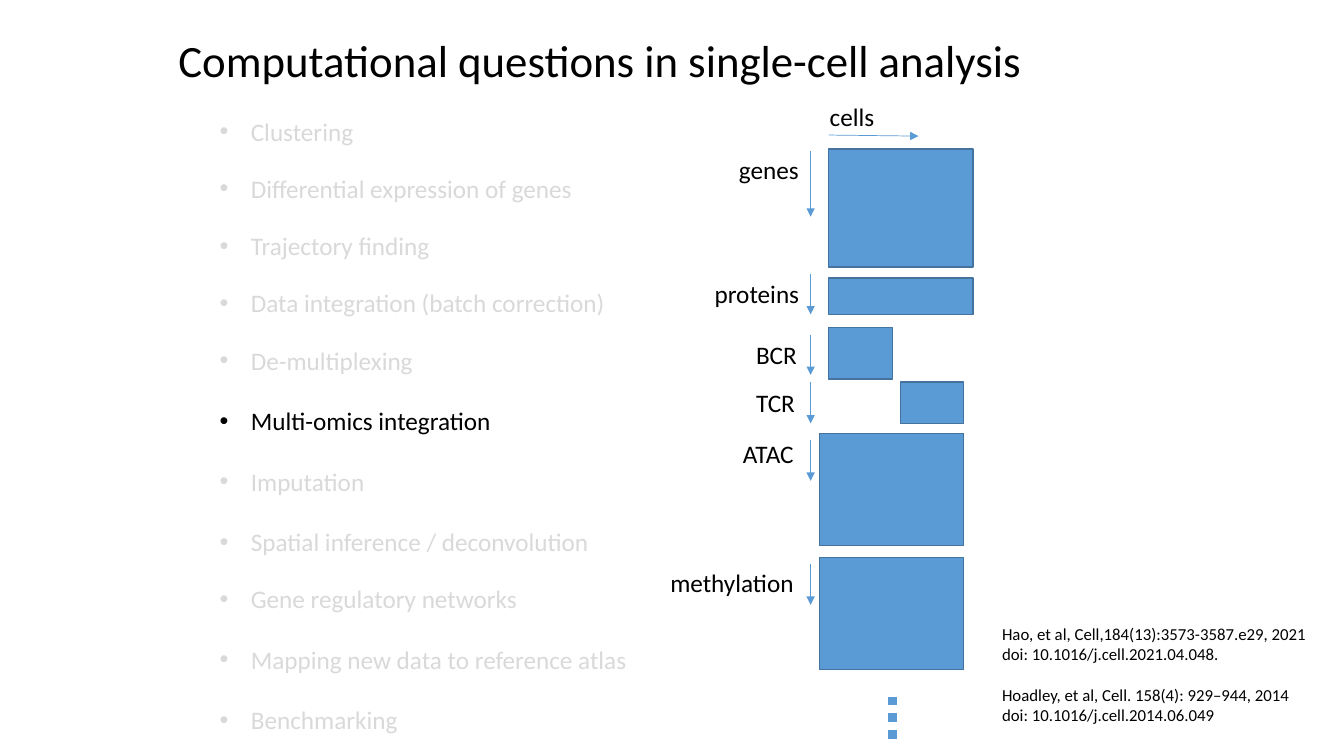
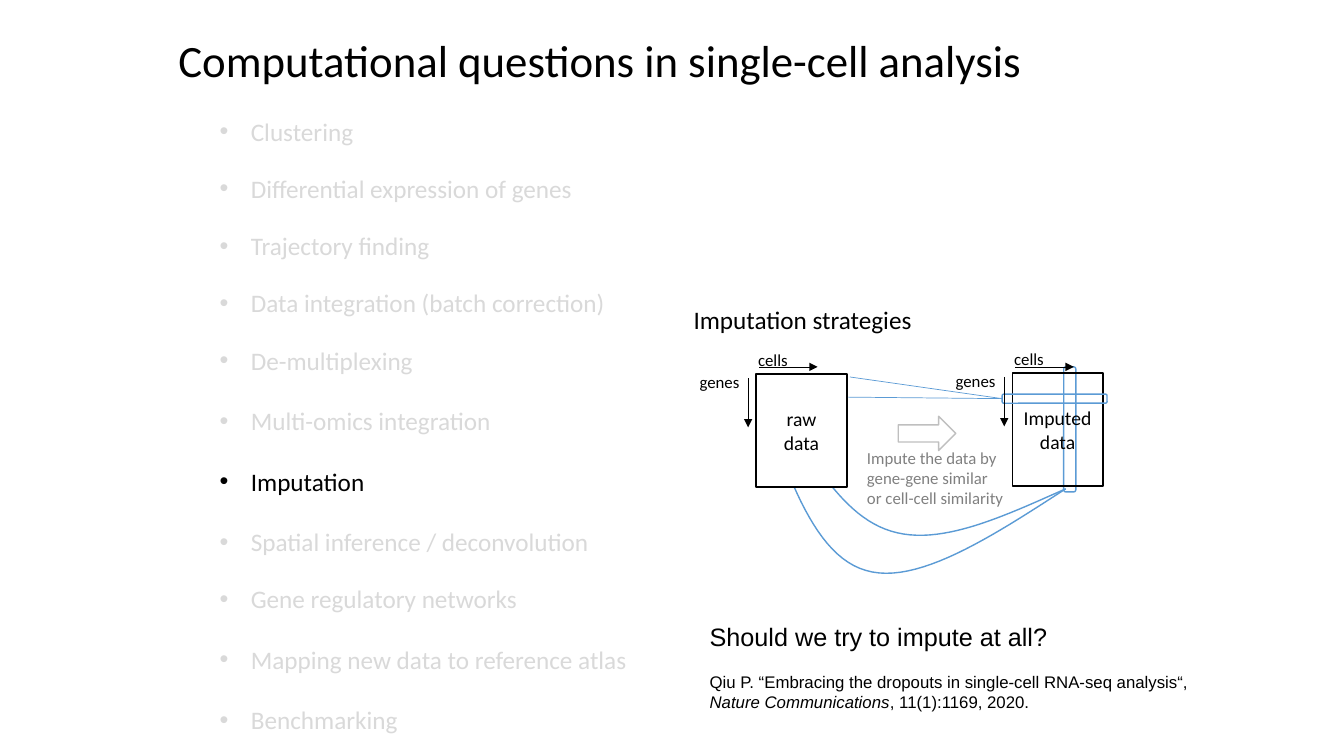
from pptx import Presentation
from pptx import util as u
from pptx.dml.color import RGBColor
from pptx.enum import dml, shapes, text
from pptx.oxml.ns import qn
from lxml import etree

PX = 9144  # EMU per px, 100 px to the inch
COLORS = {
    "ink": "000000", "muted": "D9D9D9", "note": "808080", "paper": "FFFFFF",
    "blue": "5B9BD5", "edge": "43739E", "arrow": "BFBFBF",
}
RGB = {name: RGBColor.from_string(value) for name, value in COLORS.items()}
TITLE = "Computational questions in single-cell analysis"
# Each topic with the space below it in points
TOPICS = [
    ("Clustering", 19.3),
    ("Differential expression of genes", 19.3),
    ("Trajectory finding", 19.3),
    ("Data integration (batch correction)", 19.3),
    ("De-multiplexing", 21.6),
    ("Multi-omics integration", 21.6),
    ("Imputation", 21.6),
    ("Spatial inference / deconvolution", 19.3),
    ("Gene regulatory networks", 21.6),
    ("Mapping new data to reference atlas", 21.6),
    ("Benchmarking", 0),
]


def write(slide, box, lines, size, color="ink", font="Calibri", wrap=True):
    """Add a text box with one paragraph per line and return its text frame."""
    frame = slide.shapes.add_textbox(*(v * PX for v in box)).text_frame
    frame.word_wrap = wrap
    frame.auto_size = text.MSO_AUTO_SIZE.SHAPE_TO_FIT_TEXT
    frame.text = "\n".join(lines)
    for paragraph in frame.paragraphs:
        paragraph.font.size = u.Pt(size)
        paragraph.font.name = font
        paragraph.font.color.rgb = RGB[color]
    return frame


def draw(slide, preset, box, fill, edge, caption=""):
    """Add an outlined preset shape; a fill of None leaves it see-through."""
    shape = slide.shapes.add_shape(preset, *(v * PX for v in box))
    shape.shadow.inherit = False
    if fill:
        shape.fill.solid()
        shape.fill.fore_color.rgb = RGB[fill]
    else:
        shape.fill.background()
    shape.line.color.rgb = RGB[edge]
    shape.line.width = u.Pt(1)
    if caption:
        shape.text_frame.text = caption
        for paragraph in shape.text_frame.paragraphs:
            paragraph.alignment = text.PP_ALIGN.CENTER
            paragraph.font.size = u.Pt(14)
            paragraph.font.name = "Calibri"
            paragraph.font.color.rgb = RGB["ink"]
    return shape


RECT = shapes.MSO_SHAPE.RECTANGLE
ROUNDED = shapes.MSO_SHAPE.ROUNDED_RECTANGLE
prs = Presentation()
prs.slide_width, prs.slide_height = 1333 * PX, 750 * PX

# Title and topic list, with the current topic in black
pages = []
for current in ("Multi-omics integration", "Imputation"):
    page = prs.slides.add_slide(prs.slide_layouts[6])
    pages.append(page)
    heading = write(page, (167, 0, 1000, 125), [TITLE], 32)
    heading.auto_size = text.MSO_AUTO_SIZE.NONE
    heading.vertical_anchor = text.MSO_ANCHOR.MIDDLE
    heading.paragraphs[0].line_spacing = 0.9
    topics = write(page, (208, 110, 900, 629), [name for name, _ in TOPICS], 18, "muted")
    for paragraph, (name, gap) in zip(topics.paragraphs, TOPICS):
        paragraph.space_after = u.Pt(gap)
        if name == current:
            paragraph.font.color.rgb = RGB["ink"]
        properties = paragraph._p.get_or_add_pPr()
        properties.set("marL", str(31 * PX))
        properties.set("indent", str(-31 * PX))
        defaults = properties.find(qn("a:defRPr"))
        defaults.addprevious(etree.Element(qn("a:buFont"), typeface="Arial"))
        defaults.addprevious(etree.Element(qn("a:buChar"), char="•"))
omics, imputation = pages

# Straight lines of both slides: slide, ends, colour
arrows = [(omics, (822, 134, 911, 135), "blue")]

# Omics layers: label, its left, top and width, arrow top and bottom, matrix box
LAYERS = [
    ("genes", 723, 148, 82, 150, 215, (822, 148, 143, 117)),
    ("proteins", 699, 271, 107, 272, 312, (822, 276, 143, 36)),
    ("BCR", 740, 332, 62, 332, 372, (822, 325, 63, 51)),
    ("TCR", 740, 379, 61, 379, 420, (893, 379, 63, 41)),
    ("ATAC", 727, 430, 74, 437, 477, (813, 430, 143, 111)),
    ("methylation", 655, 558, 146, 560, 600, (813, 553, 143, 111)),
]
write(omics, (813, 96, 65, 40), ["cells"], 18, wrap=False)
for label, left, top, width, start, end, matrix in LAYERS:
    draw(omics, RECT, matrix, "blue", "edge")
    write(omics, (left, top, width, 40), [label], 18, wrap=False)
    arrows.append((omics, (804, start, 804, end), "blue"))

more = omics.shapes.add_connector(
    shapes.MSO_CONNECTOR.STRAIGHT, *(v * PX for v in (885, 691, 885, 733)))
more.line.dash_style = dml.MSO_LINE.ROUND_DOT

references = write(omics, (984, 614, 331, 131), [
    "Hao, et al, Cell,184(13):3573-3587.e29, 2021",
    "doi: 10.1016/j.cell.2021.04.048.",
    "Hoadley, et al, Cell. 158(4): 929–944, 2014",
    "doi: 10.1016/j.cell.2014.06.049",
], 12)
references.paragraphs[1].space_after = u.Pt(14.4)

# Curves from the raw cells to the imputed cell, as cubic Bézier segments
CURVES = [
    [[(771, 398), (804, 456), (837, 513), (884, 527)],
     [(884, 527), (932, 542), (994, 513), (1057, 485)]],
    [[(756, 398), (782, 475), (809, 552), (859, 566)],
     [(859, 566), (909, 581), (983, 533), (1057, 485)]],
]
STEPS = 24
for segments in CURVES:
    points = []
    for segment in segments:
        for step in range(STEPS + 1):
            t = step / STEPS
            weights = ((1 - t) ** 3, 3 * t * (1 - t) ** 2, 3 * t ** 2 * (1 - t), t ** 3)
            points.append(tuple(
                PX * sum(w * p[axis] for w, p in zip(weights, segment)) for axis in (0, 1)))
    builder = imputation.shapes.build_freeform(*points[0])
    builder.add_line_segments(points[1:], close=False)
    curve = builder.convert_to_shape()
    curve.shadow.inherit = False
    curve.fill.background()
    curve.line.color.rgb = RGB["blue"]
    curve.line.width = u.Pt(1)

# Raw and imputed matrices with their axes
draw(imputation, ROUNDED, (1055, 364, 12, 124), None, "blue")
for caption, left, top, fill in (("raw\ndata", 750, 371, "paper"), ("Imputed\ndata", 1004, 370, None)):
    draw(imputation, RECT, (left, top, 90, 112), fill, "ink", caption)
    write(imputation, (left - 8, top - 29, 50, 30), ["cells"], 12, wrap=False)
    write(imputation, (left - 66, top - 7, 60, 30), ["genes"], 12, wrap=False)
    arrows.append((imputation, (left + 3, 364, left + 61, 364), "ink"))
    arrows.append((imputation, (left - 8, top + 4, left - 8, top + 53), "ink"))
draw(imputation, shapes.MSO_SHAPE.RIGHT_ARROW, (891, 413, 57, 34), "paper", "arrow")
imputed_gene = draw(imputation, ROUNDED, (994, 391, 104, 9), None, "blue")

write(imputation, (850, 439, 171, 71),
      ["Impute the data by", "gene-gene similar", "or cell-cell similarity"], 12, "note")
write(imputation, (678, 297, 239, 40), ["Imputation strategies"], 18, wrap=False)
question = write(imputation, (694, 611, 506, 101), [
    "Should we try to impute at all?",
    "Qiu P. “Embracing the dropouts in single-cell RNA-seq analysis“, ",
], 18, font="Arial")
question.paragraphs[0].space_after = u.Pt(14.4)
citation = question.paragraphs[1]
citation.font.size = u.Pt(12)
journal = citation.add_run()
journal.text = "Nature Communications"
journal.font.italic = True
citation.add_run().text = ", 11(1):1169, 2020."

# Connectors: line, colour, width, arrowhead
connectors = [(more, "blue", 6, False)]
for page, ends, color in arrows:
    arrow = page.shapes.add_connector(shapes.MSO_CONNECTOR.STRAIGHT, *(v * PX for v in ends))
    connectors.append((arrow, color, 0.5, True))
for x, y in ((843, 374), (841, 394)):
    link = imputation.shapes.add_connector(
        shapes.MSO_CONNECTOR.STRAIGHT, x * PX, y * PX, 994 * PX, 395 * PX)
    link.end_connect(imputed_gene, 1)
    connectors.append((link, "blue", 0.5, False))
for connector, color, width, headed in connectors:
    connector.line.color.rgb = RGB[color]
    connector.line.width = u.Pt(width)
    if headed:
        etree.SubElement(connector.line._get_or_add_ln(), qn("a:tailEnd"), type="triangle")
    etree.SubElement(connector._element.spPr, qn("a:effectLst"))

prs.save("out.pptx")
